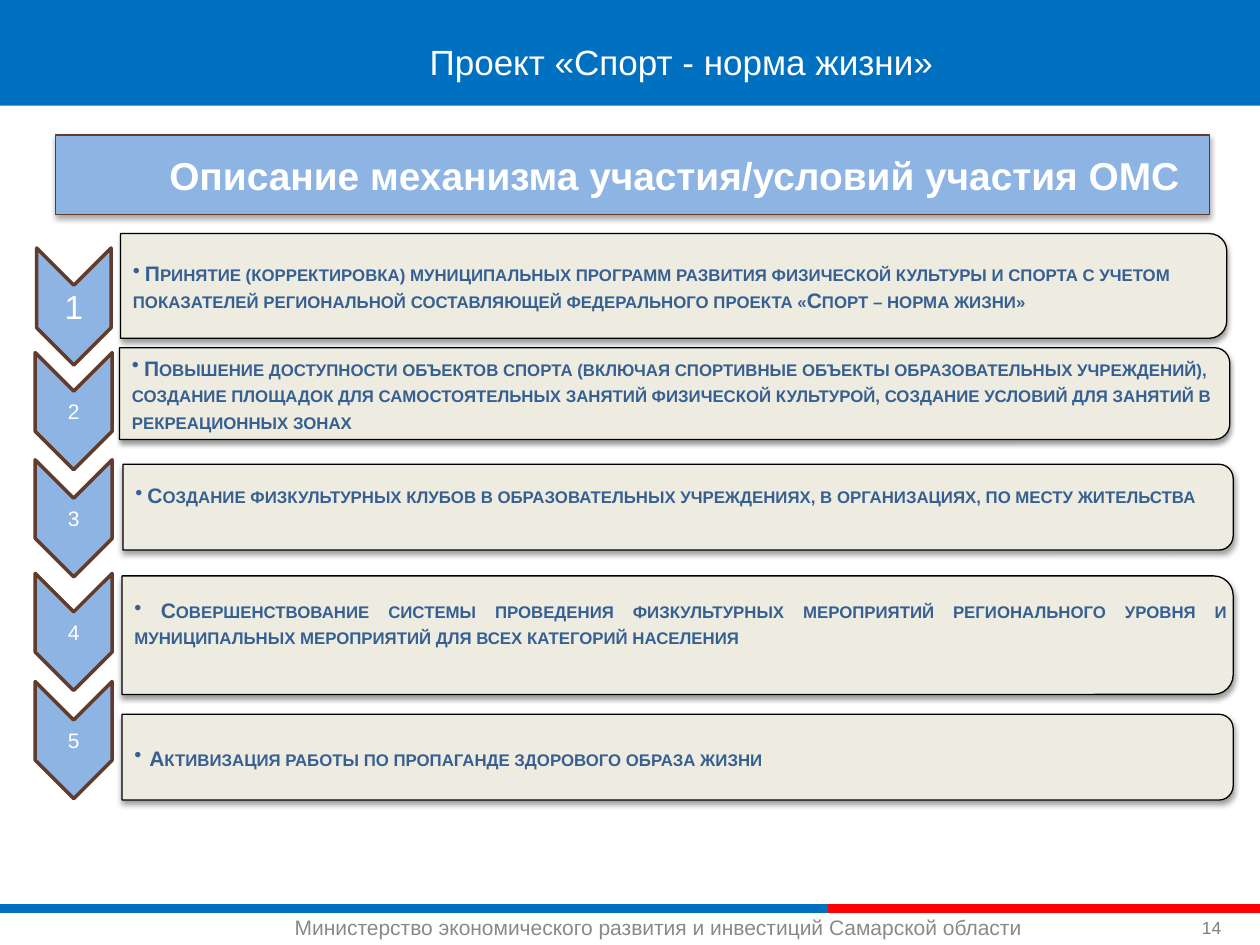
from lxml import etree
from pptx import Presentation
from pptx.dml.color import RGBColor
from pptx.enum.shapes import MSO_CONNECTOR, MSO_SHAPE
from pptx.enum.text import MSO_ANCHOR, PP_ALIGN
from pptx.oxml.ns import qn
from pptx.util import Cm, Pt

RECTANGLE = MSO_SHAPE.RECTANGLE
CHEVRON = MSO_SHAPE.CHEVRON
ROUNDED_PANEL = MSO_SHAPE.ROUND_2_SAME_RECTANGLE
STRAIGHT = MSO_CONNECTOR.STRAIGHT
TOP, MIDDLE, BOTTOM = MSO_ANCHOR.TOP, MSO_ANCHOR.MIDDLE, MSO_ANCHOR.BOTTOM
LEFT, CENTER, JUSTIFY = PP_ALIGN.LEFT, PP_ALIGN.CENTER, PP_ALIGN.JUSTIFY

COLORS = {
    "blue": "0070C1", "red": "FF0000", "white": "FFFFFF", "light_blue": "8EB4E3",
    "brown": "623B2A", "beige": "EEECE1", "black": "000000", "text": "376092",
    "footer": "898989", "number": "808080",
}
WIDTH, HEIGHT = 25.4, 19.05
NARROW = (0.25, 0.03, 0.03, 0.03)
NO_MARGINS = (0.03, 0.03, 0.03, 0.03)

STEPS = [
    {"chevron": (0.74, 5, 1.5, 2.36), "panel": (2.43, 4.71, 22.3, 2.11), "size": 19,
     "text": " Принятие (корректировка) муниципальных программ развития физической культуры "
             "и спорта с учетом показателей региональной составляющей федерального проекта "
             "«Спорт – норма жизни»"},
    {"chevron": (0.71, 7.11, 1.55, 2.36), "panel": (2.41, 7.01, 22.38, 1.85),
     "text": " Повышение доступности объектов спорта (включая спортивные объекты "
             "образовательных учреждений), создание площадок для самостоятельных занятий "
             "физической культурой, создание условий для занятий в рекреационных зонах"},
    {"chevron": (0.71, 9.27, 1.55, 2.36), "panel": (2.48, 9.36, 22.38, 1.73), "lift": 0.5,
     "text": " Создание физкультурных клубов в образовательных учреждениях, "
             "в организациях, по месту жительства"},
    {"chevron": (0.71, 11.56, 1.55, 2.36), "panel": (2.46, 11.61, 22.4, 2.39), "lift": 0.5,
     "align": JUSTIFY,
     "text": " Совершенствование системы проведения физкультурных мероприятий "
             "регионального уровня и муниципальных мероприятий для всех категорий населения"},
    {"chevron": (0.71, 13.74, 1.55, 2.36), "panel": (2.46, 14.4, 22.4, 1.73), "hanging": 0.3,
     "text": "Активизация работы по пропаганде здорового образа жизни"},
]


def color(name):
    """Return a palette colour."""
    return RGBColor.from_string(COLORS[name])


def add_shadow(shape, opacity):
    """Give a shape a soft shadow that falls straight down."""
    effects = etree.SubElement(shape._element.spPr, qn("a:effectLst"))
    shadow = etree.SubElement(effects, qn("a:outerShdw"), blurRad="39370", dist="22860",
                              dir="5400000", rotWithShape="0")
    tint = etree.SubElement(shadow, qn("a:srgbClr"), val=COLORS["black"])
    etree.SubElement(tint, qn("a:alpha"), val=str(opacity * 1000))


def add_block(slide, preset, box, fill, line=None, width=0.75, turned=False, shadow=None):
    """Draw a filled shape in a box, turned by 90 degrees if asked."""
    left, top, across, down = box
    if turned:
        left, top = left + (across - down) / 2, top + (down - across) / 2
        across, down = down, across
    shape = slide.shapes.add_shape(preset, Cm(left), Cm(top), Cm(across), Cm(down))
    shape.rotation = 90 if turned else 0
    shape.fill.solid()
    shape.fill.fore_color.rgb = color(fill)
    if line:
        shape.line.color.rgb = color(line)
        shape.line.width = Pt(width)
    else:
        shape.line.fill.background()
    if shadow:
        add_shadow(shape, shadow)
    else:
        shape.shadow.inherit = False
    return shape


def fill_text(shape, text, size, ink, align=LEFT, anchor=TOP, margins=(0.25, 0.13, 0.25, 0.13),
              bold=False):
    """Write one paragraph into a shape and return it."""
    frame = shape.text_frame
    frame.word_wrap = True
    frame.vertical_anchor = anchor
    (frame.margin_left, frame.margin_top,
     frame.margin_right, frame.margin_bottom) = map(Cm, margins)
    paragraph = frame.paragraphs[0]
    paragraph.text = text
    paragraph.alignment = align
    paragraph.font.name = "Arial"
    paragraph.font.size = Pt(size)
    paragraph.font.bold = bold
    paragraph.font.color.rgb = color(ink)
    return paragraph


def add_text(slide, box, *args, **options):
    """Add a text box holding one paragraph and return the paragraph."""
    return fill_text(slide.shapes.add_textbox(*map(Cm, box)), *args, **options)


def set_bullet(paragraph, hanging):
    """Give a paragraph a round bullet and small capitals."""
    properties = paragraph._p.get_or_add_pPr()
    properties.set("marL", str(Cm(hanging)))
    properties.set("indent", str(-Cm(hanging)))
    bullet = etree.Element(qn("a:buChar"), char="•")
    defaults = properties.find(qn("a:defRPr"))
    defaults.addprevious(bullet)
    defaults.set("cap", "small")


def add_header(slide, box):
    """Draw the top band with the slide title."""
    left, top, width, height = box
    add_block(slide, RECTANGLE, box, "blue")
    add_text(slide, (left + 2.16, top + 0.69, width - 2.24, 1.12),
             "Проект «Спорт - норма жизни»", 20, "white", CENTER)


def add_banner(slide, box):
    """Draw the framed section heading."""
    banner = add_block(slide, RECTANGLE, box, "light_blue", "brown", shadow=35)
    fill_text(banner, "Описание механизма участия/условий участия ОМС", 22.2, "white",
              CENTER, MIDDLE, margins=(1.95, 0.13, 0.25, 0.13), bold=True)


def add_step(slide, number, step):
    """Draw a numbered chevron and the panel that describes the step."""
    add_block(slide, CHEVRON, step["chevron"], "light_blue", "brown", 2, turned=True)
    add_text(slide, step["chevron"], str(number), step.get("size", 12), "white",
             CENTER, MIDDLE, NO_MARGINS)
    left, top, width, height = step["panel"]
    add_block(slide, ROUNDED_PANEL, step["panel"], "beige", "black", turned=True, shadow=38)
    paragraph = add_text(slide, (left, top, width - 0.1, height - step.get("lift", 0)),
                         step["text"], 12, "text", step.get("align", LEFT), MIDDLE,
                         NARROW, bold=True)
    paragraph.line_spacing = 1.05
    set_bullet(paragraph, step.get("hanging", 0))


def add_footer(slide, box):
    """Draw the two-colour rule, the ministry name and the slide number."""
    left, top, width, height = box
    split = left + 16.69
    for start, end, ink in ((left, split, "blue"), (split, left + width, "red")):
        rule = slide.shapes.add_connector(STRAIGHT, Cm(start), Cm(top), Cm(end), Cm(top))
        rule.line.color.rgb = color(ink)
        rule.line.width = Pt(5)
        etree.SubElement(rule._element.spPr, qn("a:effectLst"))
    add_text(slide, (left + 5.69, top, 16.61, 0.76),
             "Министерство экономического развития и инвестиций Самарской области",
             12, "footer")
    add_text(slide, (left + width - 1.42, top - 0.28, 1.42, 1.02), "14", 10, "number",
             anchor=BOTTOM)


def main():
    """Build the slide and save it."""
    presentation = Presentation()
    presentation.slide_width, presentation.slide_height = Cm(WIDTH), Cm(HEIGHT)
    slide = presentation.slides.add_slide(presentation.slide_layouts[6])
    add_header(slide, (0, 0, WIDTH, 2.13))
    add_banner(slide, (1.12, 2.72, 23.27, 1.6))
    for number, step in enumerate(STEPS, 1):
        add_step(slide, number, step)
    add_footer(slide, (0, 18.31, WIDTH, 0.74))
    presentation.save("out.pptx")


if __name__ == "__main__":
    main()
